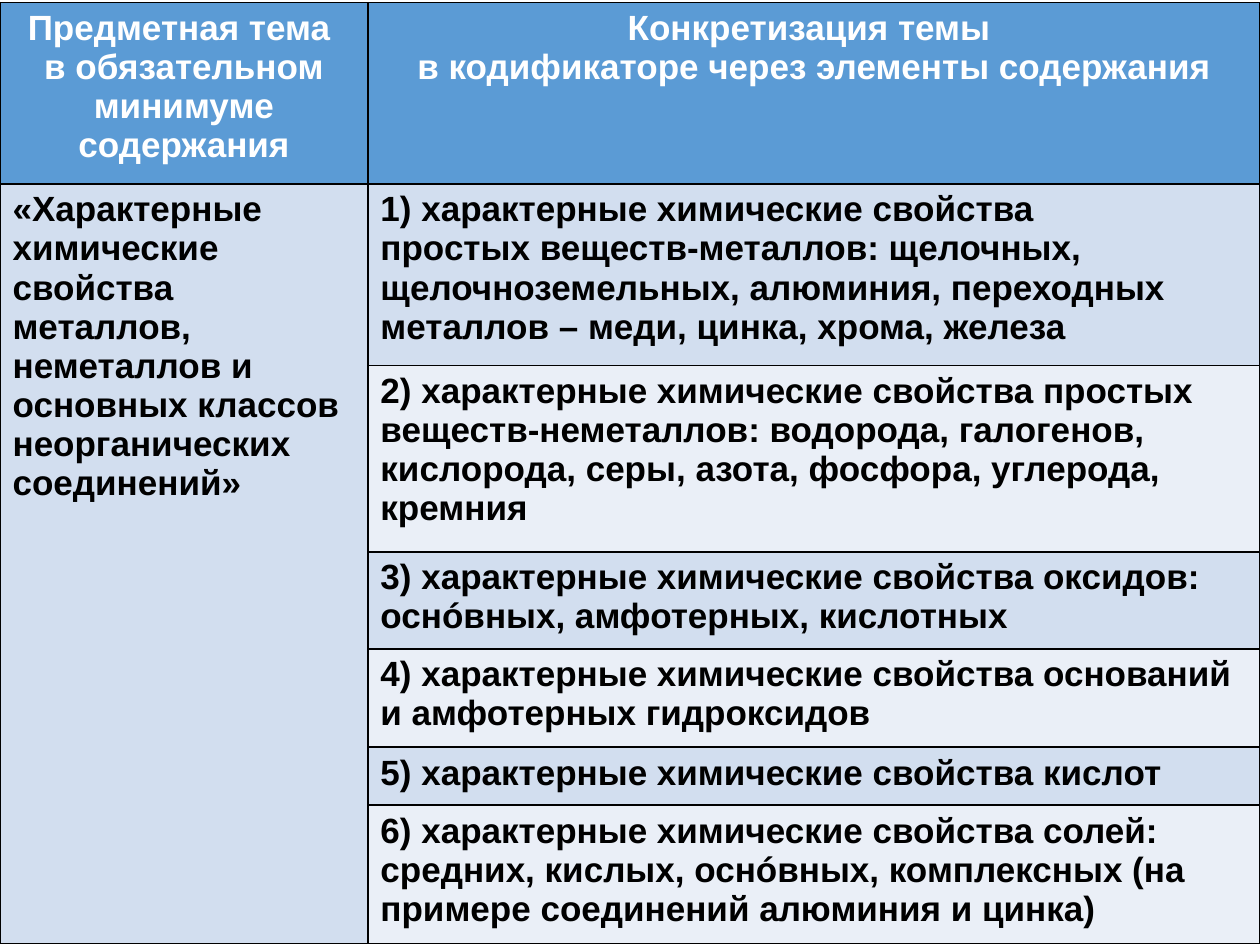
from dataclasses import dataclass

from lxml.etree import SubElement
from pptx import Presentation
from pptx.dml.color import RGBColor
from pptx.enum.text import PP_ALIGN
from pptx.oxml.ns import qn
from pptx.util import Inches, Pt

HEADERS = [
    ["Предметная тема ", "в обязательном минимуме содержания"],
    ["Конкретизация темы ", "в кодификаторе через элементы содержания"],
]
TOPIC = [
    "«Характерные химические свойства металлов, неметаллов "
    "и основных классов неорганических соединений»"
]
ELEMENTS = [
    [
        "1) характерные химические свойства",
        "простых веществ-металлов: щелочных, щелочноземельных, алюминия, "
        "переходных металлов – меди, цинка, хрома, железа",
    ],
    [
        "2) характерные химические свойства простых веществ-неметаллов: водорода, "
        "галогенов, кислорода, серы, азота, фосфора, углерода, кремния"
    ],
    ["3) характерные химические свойства оксидов: оснóвных, амфотерных, кислотных"],
    ["4) характерные химические свойства оснований и амфотерных гидроксидов"],
    ["5) характерные химические свойства кислот"],
    [
        "6) характерные химические свойства солей: средних, кислых, оснóвных, "
        "комплексных (на примере соединений алюминия и цинка)"
    ],
]
COLUMN_WIDTHS = [2.92, 7.08]
ROW_HEIGHTS = [1.44, 1.44, 1.48, 0.77, 0.78, 0.46, 1.1]
TABLE_TOP = 0.02


@dataclass(frozen=True)
class Theme:
    font: str = "Arial"
    size: int = 20
    header_fill: str = "5B9BD5"
    header_text: str = "FFFFFF"
    body_text: str = "000000"
    bands: tuple = ("D2DEEF", "EAEFF7")
    border: str = "000000"
    border_width: int = 1


THEME = Theme()


def add_borders(cell):
    properties = cell._tc.get_or_add_tcPr()
    for position, side in enumerate(("lnL", "lnR", "lnT", "lnB")):
        line = SubElement(properties, qn(f"a:{side}"), w=str(Pt(THEME.border_width)))
        fill = SubElement(line, qn("a:solidFill"))
        SubElement(fill, qn("a:srgbClr"), val=THEME.border)
        properties.insert(position, line)


def write_cell(cell, lines, color, alignment):
    frame = cell.text_frame
    for index, text in enumerate(lines):
        paragraph = frame.add_paragraph() if index else frame.paragraphs[0]
        paragraph.alignment = alignment
        run = paragraph.add_run()
        run.text = text
        run.font.name = THEME.font
        run.font.size = Pt(THEME.size)
        run.font.bold = True
        run.font.color.rgb = RGBColor.from_string(color)


def style_cell(cell, fill):
    cell.fill.solid()
    cell.fill.fore_color.rgb = RGBColor.from_string(fill)
    add_borders(cell)


def add_content_table(slide):
    table = slide.shapes.add_table(
        len(ROW_HEIGHTS), len(COLUMN_WIDTHS), 0, Inches(TABLE_TOP),
        Inches(sum(COLUMN_WIDTHS)), Inches(sum(ROW_HEIGHTS)),
    ).table
    for column, width in zip(table.columns, COLUMN_WIDTHS):
        column.width = Inches(width)
    for row, height in zip(table.rows, ROW_HEIGHTS):
        row.height = Inches(height)

    for column, lines in enumerate(HEADERS):
        cell = table.cell(0, column)
        write_cell(cell, lines, THEME.header_text, PP_ALIGN.CENTER)
        style_cell(cell, THEME.header_fill)

    for row, lines in enumerate(ELEMENTS, start=1):
        style_cell(table.cell(row, 0), THEME.bands[0])
        cell = table.cell(row, 1)
        write_cell(cell, lines, THEME.body_text, PP_ALIGN.LEFT)
        style_cell(cell, THEME.bands[(row - 1) % len(THEME.bands)])

    topic_cell = table.cell(1, 0)
    topic_cell.merge(table.cell(len(ELEMENTS), 0))
    write_cell(topic_cell, TOPIC, THEME.body_text, PP_ALIGN.LEFT)


def main():
    presentation = Presentation()
    presentation.slide_width = Inches(10)
    presentation.slide_height = Inches(7.5)
    slide = presentation.slides.add_slide(presentation.slide_layouts[6])
    add_content_table(slide)
    presentation.save("out.pptx")


if __name__ == "__main__":
    main()
